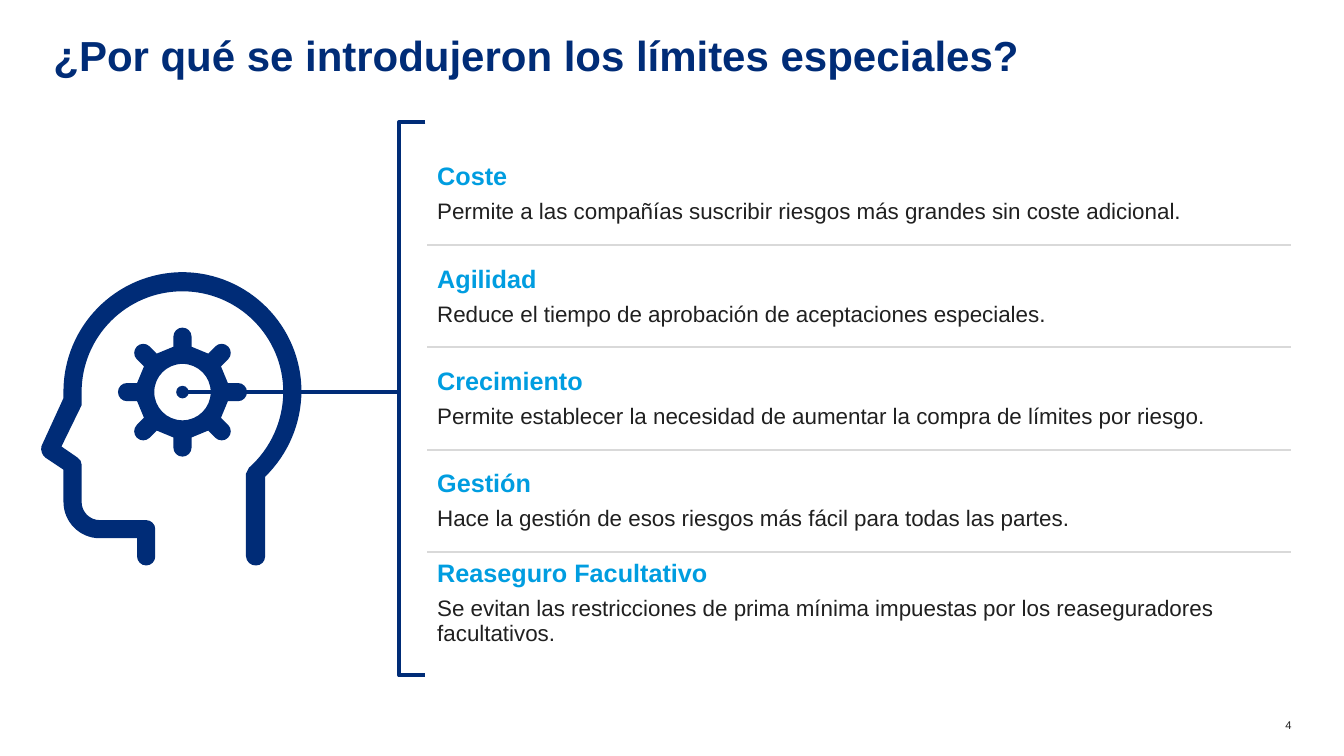
from math import atan2, cos, hypot, pi, radians, sin, tan

from lxml.etree import SubElement
from pptx import Presentation
from pptx.dml.color import RGBColor
from pptx.enum.shapes import MSO_CONNECTOR
from pptx.enum.text import MSO_ANCHOR, PP_ALIGN
from pptx.oxml.ns import qn
from pptx.util import Inches, Pt

COLORS = {"navy": "002C77", "sky": "009DE0", "text": "202020", "rule": "D9D9D9"}
RGB = {name: RGBColor.from_string(value) for name, value in COLORS.items()}
REASONS = [
    ("Coste", "Permite a las compañías suscribir riesgos más grandes sin coste adicional."),
    ("Agilidad", "Reduce el tiempo de aprobación de aceptaciones especiales."),
    ("Crecimiento", "Permite establecer la necesidad de aumentar la compra de límites por riesgo."),
    ("Gestión", "Hace la gestión de esos riesgos más fácil para todas las partes."),
    ("Reaseguro Facultativo", "Se evitan las restricciones de prima mínima impuestas por los reaseguradores facultativos."),
]


def bend_segment(segment, start, end, sweep):
    chord = hypot(end[0] - start[0], end[1] - start[1])
    direction = atan2(end[1] - start[1], end[0] - start[0])
    half = radians(sweep) / 2
    reach = chord * 2 / 3 * tan(half / 2) / sin(half)
    segment.tag = qn("a:cubicBezTo")
    for index, (origin, angle) in enumerate([(start, direction - half), (end, direction + half + pi)]):
        point = SubElement(segment, qn("a:pt"))
        point.set("x", str(round(origin[0] + reach * cos(angle))))
        point.set("y", str(round(origin[1] + reach * sin(angle))))
        segment.insert(index, point)


def draw_outline(shapes, contours, close=True):
    anchors = [[(Inches(x), Inches(y)) for x, y, sweep in contour] for contour in contours]
    builder = shapes.build_freeform(*anchors[0][0])
    builder.add_line_segments(anchors[0][1:], close=close)
    for contour in anchors[1:]:
        builder.move_to(*contour[0])
        builder.add_line_segments(contour[1:], close=close)
    shape = builder.convert_to_shape()
    shape.shadow.inherit = False
    if close:
        shape.fill.solid()
        shape.fill.fore_color.rgb = RGB["navy"]
        shape.line.fill.background()
    else:
        shape.fill.background()
        shape.line.color.rgb = RGB["navy"]
        shape.line.width = Pt(3)
    sweeps = [sweep for contour in contours for x, y, sweep in contour]
    segments = list(shape._element.iter(qn("a:moveTo"), qn("a:lnTo")))
    previous = None
    for segment, sweep in zip(segments, sweeps):
        current = (int(segment[0].get("x")), int(segment[0].get("y")))
        if sweep:
            bend_segment(segment, previous, current, sweep)
        previous = current


presentation = Presentation()
presentation.slide_width = Inches(13.33)
presentation.slide_height = Inches(7.5)
slide = presentation.slides.add_slide(presentation.slide_layouts[5])
shapes = slide.shapes

title = shapes.title
title.left, title.top, title.width, title.height = map(Inches, (0.53, 0.39, 12.27, 0.54))
title.text_frame.text = "¿Por qué se introdujeron los límites especiales?"
page_number = shapes.add_textbox(*map(Inches, (12.5, 7.13, 0.31, 0.13)))
page_number.text_frame.text = "4"
for shape, size, bold, color, alignment in [
    (title, 30, True, "navy", PP_ALIGN.LEFT),
    (page_number, 8, False, "text", PP_ALIGN.RIGHT),
]:
    frame = shape.text_frame
    frame.word_wrap = True
    frame.vertical_anchor = MSO_ANCHOR.TOP
    frame.margin_left = frame.margin_top = frame.margin_right = frame.margin_bottom = 0
    paragraph = frame.paragraphs[0]
    paragraph.alignment = alignment
    font = paragraph.font
    font.name, font.size, font.bold = "Arial", Pt(size), bold
    font.color.rgb = RGB[color]
title.text_frame.paragraphs[0].line_spacing = 0.8

center_x, center_y = 1.81, 3.89
connector = shapes.add_connector(
    MSO_CONNECTOR.STRAIGHT, *map(Inches, (center_x, center_y, 3.94, center_y))
)
connector.line.color.rgb = RGB["navy"]
connector.line.width = Pt(3)
SubElement(connector.line._get_or_add_ln(), qn("a:headEnd"), type="oval")
SubElement(connector._element.spPr, qn("a:effectLst"))

bracket = [(4.22, 1.21, 0), (3.96, 1.21, 0), (3.96, 6.7, 0), (4.22, 6.7, 0)]
draw_outline(shapes, [bracket], close=False)

table_frame = shapes.add_table(
    len(REASONS), 1, Pt(305), Pt(101.75), Inches(8.57), Inches(5.08)
)
table = table_frame.table
table.first_row = table.horz_banding = False
table._tbl.tblPr.find(qn("a:tableStyleId")).text = "{2D5ABB26-0587-4C30-8999-92F81FD0307C}"
for row, texts in enumerate(REASONS):
    cell = table.cell(row, 0)
    cell.vertical_anchor = MSO_ANCHOR.MIDDLE
    properties = cell._tc.get_or_add_tcPr()
    for edge, visible in [("a:lnT", row > 0), ("a:lnB", row < len(REASONS) - 1)]:
        if visible:
            border = SubElement(properties, qn(edge), w=str(Pt(1.5)))
            fill = SubElement(border, qn("a:solidFill"))
            SubElement(fill, qn("a:srgbClr"), val=COLORS["rule"])
    cell.fill.background()
    cell.text_frame.text = "\n".join(texts)
    styles = [(18, True, "sky"), (16, False, "text")]
    for paragraph, (size, bold, color) in zip(cell.text_frame.paragraphs, styles):
        paragraph.space_after = Pt(6)
        font = paragraph.font
        font.name, font.size, font.bold = "Arial", Pt(size), bold
        font.color.rgb = RGB[color]

head = [
    (0.63, 3.89, 0), (1.81, 2.7, 90), (2.99, 3.89, 90), (2.63, 4.73, 45),
    (2.63, 5.52, 0), (2.54, 5.61, 90), (2.44, 5.52, 90), (2.44, 4.7, 0),
    (2.47, 4.64, 0), (2.81, 3.89, -48), (1.81, 2.89, -90), (0.81, 3.89, -90),
    (0.81, 4.02, 0), (0.61, 4.43, 0), (0.77, 4.54, 0), (0.81, 4.61, 60),
    (0.81, 4.98, 0), (0.99, 5.16, -90), (1.45, 5.16, 0), (1.54, 5.25, 90),
    (1.54, 5.52, 0), (1.45, 5.61, 90), (1.36, 5.52, 90), (1.36, 5.34, 0),
    (0.99, 5.34, 0), (0.63, 4.98, 90), (0.63, 4.66, 0), (0.45, 4.54, 0),
    (0.41, 4.43, 60), (0.63, 3.95, 0),
]
draw_outline(shapes, [head])

tooth = [(0.45, -0.09, 0), (0.55, -0.09, 0), (0.64, 0, 90), (0.55, 0.09, 90), (0.45, 0.09, 0)]
gear = []
for turn in range(0, 360, 45):
    cosine, sine = cos(radians(turn)), sin(radians(turn))
    for along, across, sweep in tooth:
        x = center_x + along * cosine - across * sine
        y = center_y + along * sine + across * cosine
        gear.append((x, y, sweep))
hole = [
    (center_x + 0.28 * cos(radians(turn)), center_y + 0.28 * sin(radians(turn)), -90 if turn < 360 else 0)
    for turn in range(360, -1, -90)
]
draw_outline(shapes, [gear, hole])

presentation.save("out.pptx")
